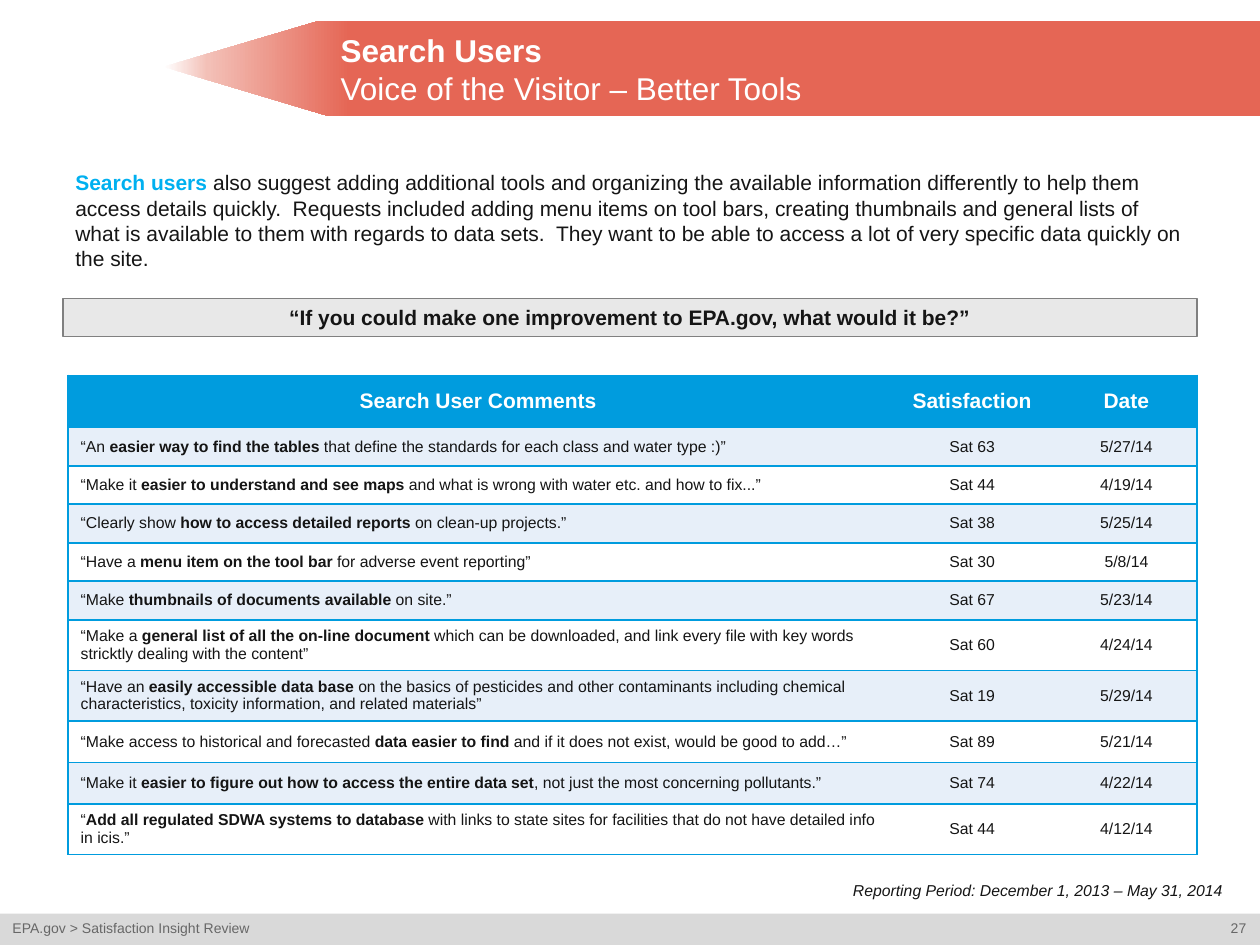
from copy import deepcopy

from lxml import etree
from pptx import Presentation
from pptx import util as u
from pptx.dml import color
from pptx.enum import shapes, text
from pptx.oxml import ns

WIDTH, HEIGHT = 10, 7.5
BLUE, WHITE, INK, GREY = "009CDE", "FFFFFF", "151515", "676767"
LEFT, CENTER, RIGHT = text.PP_ALIGN.LEFT, text.PP_ALIGN.CENTER, text.PP_ALIGN.RIGHT
FIT = text.MSO_AUTO_SIZE.SHAPE_TO_FIT_TEXT
MIDDLE = text.MSO_ANCHOR.MIDDLE

COLUMNS = [6.51, 1.33, 1.12]
HEADINGS = ["*Search User Comments*", "*Satisfaction*", "*Date*"]
HEADING_ROW = 0.41
# Row height, comment with *bold* words, satisfaction score, date
COMMENTS = [
    (0.31, "“An *easier way to find the tables *that define the standards for each "
           "class and water type :)”", 63, "5/27/14"),
    (0.3, "“Make it *easier to understand and see maps *and what is wrong with water "
          "etc. and how to fix...”", 44, "4/19/14"),
    (0.31, "“Clearly show *how to access detailed reports *on clean-up projects.”",
     38, "5/25/14"),
    (0.3, "“Have a *menu item on the tool bar *for adverse event reporting”",
     30, "5/8/14"),
    (0.31, "“Make *thumbnails of documents available *on site.”", 67, "5/23/14"),
    (0.4, "“Make a *general list of all the on-line document *which can be downloaded, "
          "and link every file with key words stricktly dealing with the content”",
     60, "4/24/14"),
    (0.4, "“Have an *easily accessible data base *on the basics of pesticides and other "
          "contaminants including chemical characteristics, toxicity information, and "
          "related materials”", 19, "5/29/14"),
    (0.33, "“Make access to historical and forecasted *data easier to find *and if it "
           "does not exist, would be good to add…”", 89, "5/21/14"),
    (0.33, "“Make it *easier to figure out how to access the entire data set*, not just "
           "the most concerning pollutants.”", 74, "4/22/14"),
    (0.4, "“*Add all regulated SDWA systems to database *with links to state sites for "
          "facilities that do not have detailed info in icis.”", 44, "4/12/14"),
]
INTRO = (
    "*Search users *also suggest adding additional tools and organizing the available "
    "information differently to help them access details quickly.  Requests included "
    "adding menu items on tool bars, creating thumbnails and general lists of what is "
    "available to them with regards to data sets.  They want to be able to access a lot "
    "of very specific data quickly on the site."
)


def rgb(value):
    return color.RGBColor.from_string(value)


def inches(box):
    return [u.Inches(length) for length in box]


def write(frame, words, size, ink=INK, bold_ink=None, align=LEFT, italic=None, **layout):
    """Fill a frame; *stars* mark bold words and a newline breaks the line."""
    for name, value in {"word_wrap": True, **layout}.items():
        setattr(frame, name, value)
    para = frame.paragraphs[0]
    para.alignment = align
    for index, part in enumerate(words.split("*")):
        bold = index % 2 == 1
        look = {"name": "Arial", "size": u.Pt(size), "bold": bold, "italic": italic}
        for number, line in enumerate(part.split("\n")):
            if number:
                para.add_line_break()
            if not line:
                continue
            span = para.add_run()
            span.text = line
            for name, value in look.items():
                setattr(span.font, name, value)
            span.font.color.rgb = rgb(bold_ink if bold and bold_ink else ink)


def add_text(page, box, words, size, **options):
    write(page.shapes.add_textbox(*inches(box)).text_frame, words, size, **options)


def add_bar(page, box, fill, line=None):
    bar = page.shapes.add_shape(shapes.MSO_SHAPE.RECTANGLE, *inches(box))
    bar.shadow.inherit = False
    bar.fill.solid()
    bar.fill.fore_color.rgb = rgb(fill)
    if line:
        bar.line.color.rgb = rgb(line)
        bar.line.width = u.Pt(0.75)
    else:
        bar.line.fill.background()
    return bar


def add_banner(page, box):
    left, top, width, height = box
    outline = [(0, 0.48), (0.14, 0), (1, 0), (1, 1), (0.15, 1)]
    points = [inches((left + x * width, top + y * height)) for x, y in outline]
    builder = page.shapes.build_freeform(*points[0])
    builder.add_line_segments(points[1:], close=True)
    arrow = builder.convert_to_shape()
    arrow.shadow.inherit = False
    arrow.line.fill.background()
    arrow.fill.gradient()
    arrow.fill.gradient_angle = 0
    stops = arrow.element.spPr.find(ns.qn("a:gradFill")).find(ns.qn("a:gsLst"))
    stops.append(deepcopy(stops[-1]))
    tints = [(0, WHITE), (0.04, "F3C0B7"), (0.17, "E56655")]
    for stop, (position, tint) in zip(arrow.fill.gradient_stops, tints):
        stop.position = position
        stop.color.rgb = rgb(tint)
    title = (left + 0.15 * width, top, 0.82 * width, height)
    add_text(page, title, "*Search Users*\nVoice of the Visitor – Better Tools", 18,
             ink=WHITE, vertical_anchor=MIDDLE)


def add_footer(page, box):
    left, top, width, height = box
    add_bar(page, box, "D9D9D9")
    number = 0.34
    look = {"ink": GREY, "word_wrap": False, "auto_size": FIT}
    add_text(page, (left + width - number, top, number, height), "27", 8,
             align=CENTER, **look)
    add_text(page, (left, top, 2.12, height), "EPA.gov > Satisfaction Insight Review",
             8, **look)


def add_question(page, box):
    bar = add_bar(page, box, "E8E8E8", "808080")
    write(bar.text_frame, "*“If you could make one improvement to EPA.gov, what would it be?”*",
          12, align=CENTER, vertical_anchor=MIDDLE)


def set_borders(cell, edges):
    """Draw the cell's edges; an edge with no colour is left clear."""
    properties = cell._tc.get_or_add_tcPr()
    for side, tint in edges.items():
        line = etree.SubElement(properties, ns.qn(f"a:ln{side}"), w=str(u.Pt(1)))
        if tint:
            fill = etree.SubElement(line, ns.qn("a:solidFill"))
            etree.SubElement(fill, ns.qn("a:srgbClr"), val=tint)
        else:
            etree.SubElement(line, ns.qn("a:noFill"))


def add_comments(page, left, top):
    heights = [HEADING_ROW] + [row[0] for row in COMMENTS]
    rows = [HEADINGS] + [(words, f"Sat {score}", date) for _, words, score, date in COMMENTS]
    box = inches((left, top, sum(COLUMNS), sum(heights)))
    table = page.shapes.add_table(len(rows), len(COLUMNS), *box).table
    for column, width in zip(table.columns, COLUMNS):
        column.width = u.Inches(width)
    last = len(COLUMNS) - 1
    for r, (row, height) in enumerate(zip(rows, heights)):
        table.rows[r].height = u.Inches(height)
        head = r == 0
        band = BLUE if head else "E7EFF9" if r % 2 else WHITE
        for c, words in enumerate(row):
            cell = table.cell(r, c)
            set_borders(cell, {"L": BLUE if c == 0 else None,
                               "R": BLUE if c == last else None, "T": BLUE, "B": BLUE})
            cell.fill.solid()
            cell.fill.fore_color.rgb = rgb(band)
            cell.vertical_anchor = MIDDLE
            write(cell.text_frame, words, 12 if head else 9, ink=WHITE if head else INK,
                  align=CENTER if head or c else LEFT)


def main():
    deck = Presentation()
    deck.slide_width, deck.slide_height = inches((WIDTH, HEIGHT))
    page = deck.slides.add_slide(deck.slide_layouts[6])
    margin = 0.05 * WIDTH
    body = WIDTH - 2 * margin
    add_banner(page, (0.13 * WIDTH, 0.17, 0.87 * WIDTH, 0.75))
    add_footer(page, (0, HEIGHT - 0.25, WIDTH, 0.25))
    add_question(page, (margin, 2.37, body, 0.3))
    add_comments(page, margin + 0.04, 2.98)
    add_text(page, (margin, 1.3, body, 0.91), INTRO, 12, bold_ink="00B0F0", auto_size=FIT)
    add_text(page, (6.25, 6.94, 3.55, 0.25), "Reporting Period: December 1, 2013 – May 31, 2014",
             9, align=RIGHT, italic=True, auto_size=FIT)
    deck.save("out.pptx")


if __name__ == "__main__":
    main()
